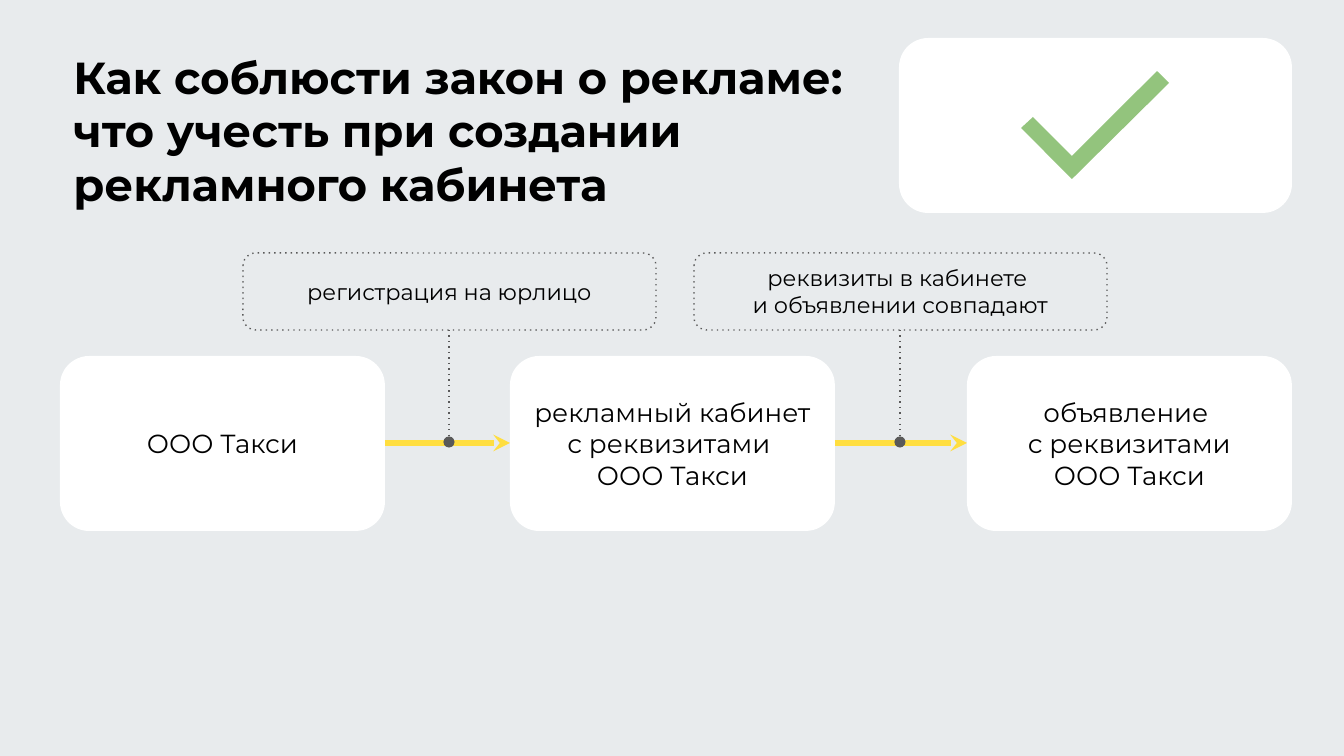
from dataclasses import dataclass

from lxml import etree
from pptx import Presentation
from pptx.dml.color import RGBColor
from pptx.enum.shapes import MSO_CONNECTOR, MSO_SHAPE
from pptx.enum.text import MSO_ANCHOR, MSO_AUTO_SIZE, PP_ALIGN
from pptx.oxml.ns import qn
from pptx.util import Emu, Inches, Pt

STRAIGHT = MSO_CONNECTOR.STRAIGHT
ROUNDED = MSO_SHAPE.ROUNDED_RECTANGLE
TOP, MIDDLE = MSO_ANCHOR.TOP, MSO_ANCHOR.MIDDLE
LEFT, CENTER = PP_ALIGN.LEFT, PP_ALIGN.CENTER

EMU_PER_PX = 914400 / 134.4
FONT = "Montserrat"
BLACK, WHITE, GRAY = "000000", "FFFFFF", "595959"
BACKGROUND, YELLOW, GREEN = "E8EBED", "FFDE40", "93C47D"

CARD_TOP, CARD_WIDTH, CARD_HEIGHT = 356, 325, 175
NOTE_TOP, NOTE_WIDTH, NOTE_HEIGHT = 253, 413, 77
ARROW_Y = CARD_TOP + CARD_HEIGHT // 2


@dataclass
class Box:
    left: int
    text: str


# "\v" is a line break inside a paragraph.
STEPS = [
    Box(60, "ООО Такси"),
    Box(510, "рекламный кабинет с реквизитами \vООО Такси"),
    Box(967, "объявление \vс реквизитами\vООО Такси"),
]
NOTES = [
    Box(243, "регистрация на юрлицо"),
    Box(694, "реквизиты в кабинете \vи объявлении совпадают"),
]
CHECK_MARK = [(1072, 179), (1021, 128), (1033, 117), (1072, 156), (1157, 71), (1169, 83)]


def px(length: int) -> Emu:
    return Emu(round(length * EMU_PER_PX))


def color(hex_string: str) -> RGBColor:
    return RGBColor.from_string(hex_string)


def set_text(shape, text: str, size: int, align=CENTER, anchor=MIDDLE, bold=False) -> None:
    frame = shape.text_frame
    frame.text = text
    frame.word_wrap = True
    frame.auto_size = MSO_AUTO_SIZE.NONE
    frame.vertical_anchor = anchor
    frame.margin_left = frame.margin_right = Inches(0.1)
    frame.margin_top = frame.margin_bottom = Inches(0.1)
    paragraph = frame.paragraphs[0]
    paragraph.alignment = align
    paragraph.line_spacing = 1.0
    paragraph.space_before = Pt(0)
    font = paragraph.font
    font.name, font.size, font.bold = FONT, Pt(size), bold
    font.color.rgb = color(BLACK)


def set_line(shape, hex_string: str, width: float, dash: str = "solid"):
    """Style the outline and return its XML element."""
    shape.line.color.rgb = color(hex_string)
    shape.line.width = Pt(width)
    line = shape.element.spPr.find(qn("a:ln"))
    etree.SubElement(line, qn("a:prstDash")).set("val", dash)
    return line


def fill_plain(shape, hex_string: str) -> None:
    """Solid fill with neither outline nor shadow."""
    shape.shadow.inherit = False
    shape.fill.solid()
    shape.fill.fore_color.rgb = color(hex_string)
    shape.line.fill.background()


def add_card(slide, left: int, top: int, width: int):
    card = slide.shapes.add_shape(ROUNDED, px(left), px(top), px(width), px(CARD_HEIGHT))
    fill_plain(card, WHITE)
    return card


def add_note(slide, note: Box) -> None:
    shape = slide.shapes.add_shape(
        ROUNDED, px(note.left), px(NOTE_TOP), px(NOTE_WIDTH), px(NOTE_HEIGHT)
    )
    shape.shadow.inherit = False
    shape.fill.background()
    set_line(shape, GRAY, 0.75, "dot")
    set_text(shape, note.text, 12)


def add_connector(slide, start: tuple[int, int], end: tuple[int, int], hex_string: str,
                  width: float, dash: str, head: str) -> None:
    connector = slide.shapes.add_connector(STRAIGHT, *map(px, start + end))
    line = set_line(connector, hex_string, width, dash)
    etree.SubElement(line, qn("a:tailEnd")).set("type", head)
    etree.SubElement(connector.element.spPr, qn("a:effectLst"))


def add_check_mark(slide) -> None:
    builder = slide.shapes.build_freeform(*CHECK_MARK[0], scale=EMU_PER_PX)
    builder.add_line_segments(CHECK_MARK[1:], close=True)
    fill_plain(builder.convert_to_shape(), GREEN)


def add_title(slide) -> None:
    title = slide.shapes.title
    title.left, title.top, title.width, title.height = map(px, (60, 36, 965, 77))
    text = "Как соблюсти закон о рекламе: \vчто учесть при создании \vрекламного кабинета"
    set_text(title, text, 24, LEFT, TOP, bold=True)


def main() -> None:
    presentation = Presentation()
    presentation.slide_width, presentation.slide_height = px(1344), px(756)
    slide = presentation.slides.add_slide(presentation.slide_layouts[5])
    slide.background.fill.solid()
    slide.background.fill.fore_color.rgb = color(BACKGROUND)

    add_title(slide)
    add_card(slide, 899, 38, 393)
    add_check_mark(slide)

    for step in STEPS:
        set_text(add_card(slide, step.left, CARD_TOP, CARD_WIDTH), step.text, 14)
    for step, following in zip(STEPS, STEPS[1:]):
        start, end = (step.left + CARD_WIDTH, ARROW_Y), (following.left, ARROW_Y)
        add_connector(slide, start, end, YELLOW, 3, "solid", "stealth")
    for note in NOTES:
        add_note(slide, note)
        middle = note.left + NOTE_WIDTH // 2
        start, end = (middle, NOTE_TOP + NOTE_HEIGHT), (middle, ARROW_Y - 1)
        add_connector(slide, start, end, GRAY, 0.75, "dot", "oval")

    presentation.save("out.pptx")


if __name__ == "__main__":
    main()
